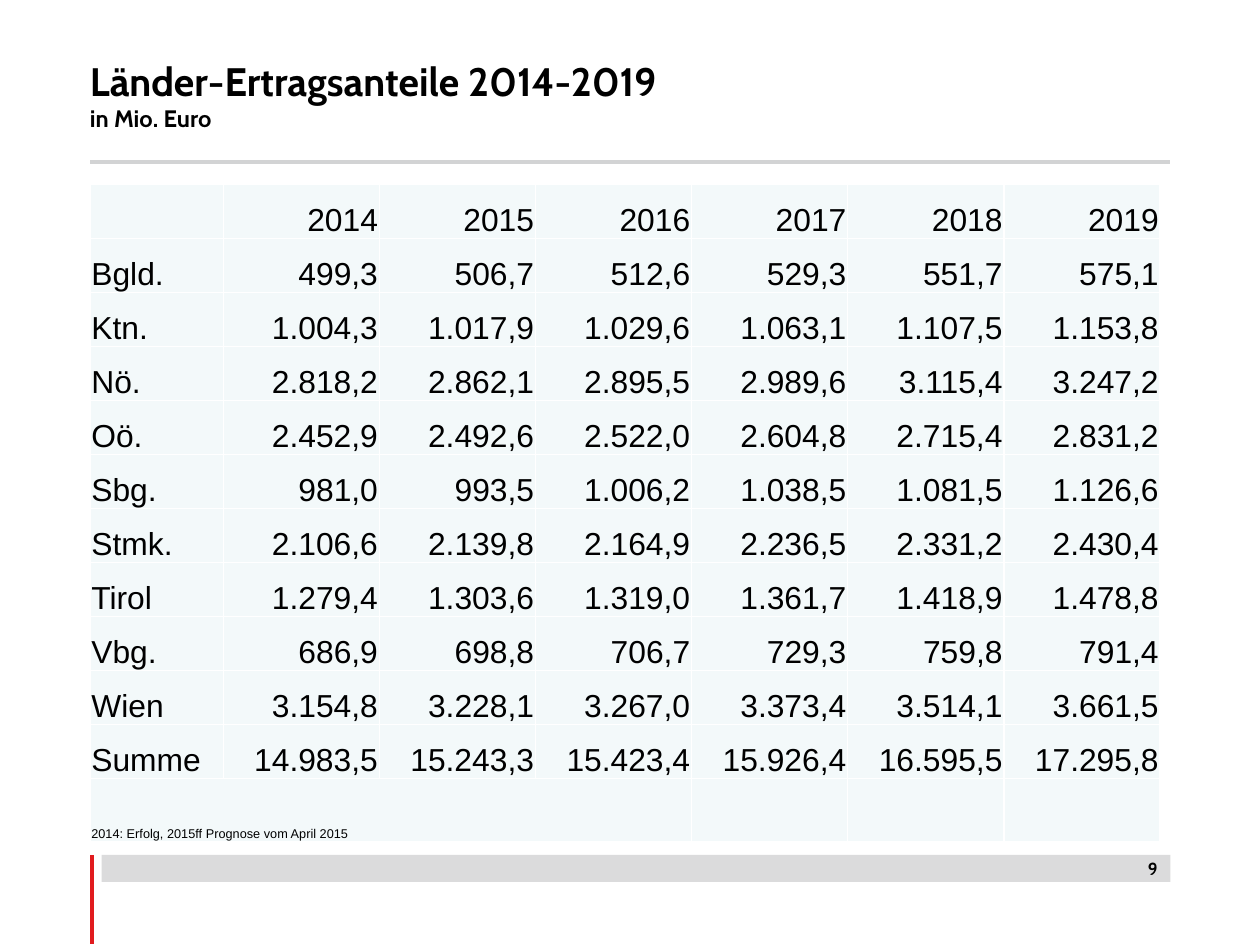
from lxml import etree
from pptx import Presentation
from pptx.dml.color import RGBColor
from pptx.enum.shapes import MSO_CONNECTOR, MSO_SHAPE
from pptx.enum.text import MSO_ANCHOR, PP_ALIGN
from pptx.oxml.ns import qn
from pptx.util import Cm, Pt

STRAIGHT = MSO_CONNECTOR.STRAIGHT
RECT = MSO_SHAPE.RECTANGLE
MIDDLE, BOTTOM = MSO_ANCHOR.MIDDLE, MSO_ANCHOR.BOTTOM
LEFT, RIGHT = PP_ALIGN.LEFT, PP_ALIGN.RIGHT

BLACK, WHITE, GREY, RED, PALE = "000000", "FFFFFF", "D2D3D4", "E11B1E", "F3F9FA"

ROWS = [
    ["", "2014", "2015", "2016", "2017", "2018", "2019"],
    ["Bgld.", "499,3", "506,7", "512,6", "529,3", "551,7", "575,1"],
    ["Ktn.", "1.004,3", "1.017,9", "1.029,6", "1.063,1", "1.107,5", "1.153,8"],
    ["Nö.", "2.818,2", "2.862,1", "2.895,5", "2.989,6", "3.115,4", "3.247,2"],
    ["Oö.", "2.452,9", "2.492,6", "2.522,0", "2.604,8", "2.715,4", "2.831,2"],
    ["Sbg.", "981,0", "993,5", "1.006,2", "1.038,5", "1.081,5", "1.126,6"],
    ["Stmk.", "2.106,6", "2.139,8", "2.164,9", "2.236,5", "2.331,2", "2.430,4"],
    ["Tirol", "1.279,4", "1.303,6", "1.319,0", "1.361,7", "1.418,9", "1.478,8"],
    ["Vbg.", "686,9", "698,8", "706,7", "729,3", "759,8", "791,4"],
    ["Wien", "3.154,8", "3.228,1", "3.267,0", "3.373,4", "3.514,1", "3.661,5"],
    ["Summe", "14.983,5", "15.243,3", "15.423,4", "15.926,4", "16.595,5", "17.295,8"],
    ["2014: Erfolg, 2015ff Prognose vom April 2015", "", "", "", "", "", ""],
]


def paint(color, code):
    """Set a fill's or font's colour from a hex string."""
    color.rgb = RGBColor.from_string(code)


def style(para, name, size, bold=False, align=LEFT):
    para.alignment = align
    para.font.name = name
    para.font.size = Pt(size)
    para.font.bold = bold
    paint(para.font.color, BLACK)


deck = Presentation()
deck.slide_width, deck.slide_height = Cm(28), Cm(21)
slide = deck.slides.add_slide(deck.slide_layouts[6])
shapes = slide.shapes

# Rules and footer bar
for x1, y1, x2, y2, code in [(2, 3.6, 26, 3.6, GREY), (2.05, 19, 2.05, 20.98, RED)]:
    rule = shapes.add_connector(STRAIGHT, Cm(x1), Cm(y1), Cm(x2), Cm(y2))
    paint(rule.line.color, code)
    rule.line.width = Pt(2.84)
    etree.SubElement(rule._element.spPr, qn("a:effectLst"))

bar = shapes.add_shape(RECT, Cm(2.26), Cm(19), Cm(23.75), Cm(0.6))
bar.shadow.inherit = False
bar.line.fill.background()
bar.fill.solid()
paint(bar.fill.fore_color, GREY)
tint = bar._element.spPr.find(".//" + qn("a:srgbClr"))
etree.SubElement(tint, qn("a:alpha"), val="80000")

# Title
title = shapes.add_textbox(Cm(2), Cm(1.1), Cm(18.5), Cm(2)).text_frame
title.word_wrap = True
title.vertical_anchor = MIDDLE
title.margin_left = title.margin_right = title.margin_top = title.margin_bottom = 0
title.text = "Länder-Ertragsanteile 2014-2019\nin Mio. Euro"
for para, size in zip(title.paragraphs, (25, 15)):
    style(para, "Cabin", size, bold=True)

# Page number
page = shapes.add_textbox(Cm(24.2), Cm(18.95), Cm(1.78), Cm(0.97)).text_frame
page.word_wrap = True
page.text = "9"
style(page.paragraphs[0], "Cabin", 11, bold=True, align=RIGHT)

# Table
last = len(ROWS) - 1
frame = shapes.add_table(len(ROWS), len(ROWS[0]), Cm(2), Cm(4.1), Cm(23.78), Cm(14.6))
table = frame.table
table.first_row = table.horz_banding = False
for c, col in enumerate(table.columns):
    col.width = Cm(3.47 if c else 2.96)
for r, row in enumerate(table.rows):
    row.height = Cm(1.4 if r == last else 1.2)

for r, texts in enumerate(ROWS):
    for c, text in enumerate(texts):
        cell = table.cell(r, c)
        cell.text = text
        cell.vertical_anchor = BOTTOM
        cell.margin_left = cell.margin_right = cell.margin_top = Cm(0.03)
        cell.margin_bottom = 0
        style(cell.text_frame.paragraphs[0], "Arial", 8 if r == last else 20,
              align=RIGHT if c else LEFT)
        props = cell._tc.get_or_add_tcPr()
        for side in ("lnL", "lnR", "lnT", "lnB"):
            edge = etree.SubElement(props, qn("a:" + side), w=str(Pt(1)))
            solid = etree.SubElement(edge, qn("a:solidFill"))
            etree.SubElement(solid, qn("a:srgbClr"), val=WHITE)
        cell.fill.solid()
        paint(cell.fill.fore_color, PALE)

table.cell(last, 0).merge(table.cell(last, 3))

deck.save("out.pptx")
